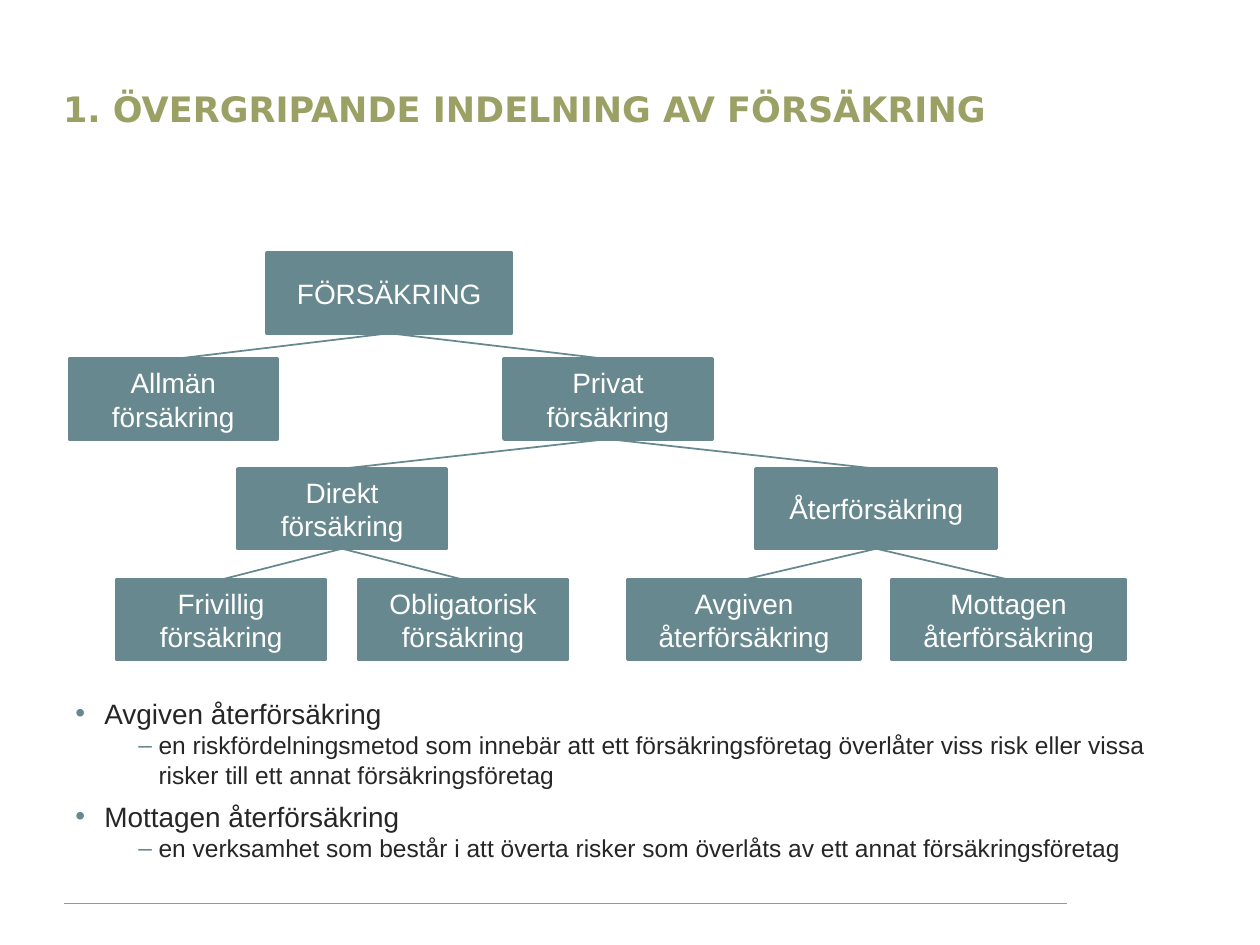
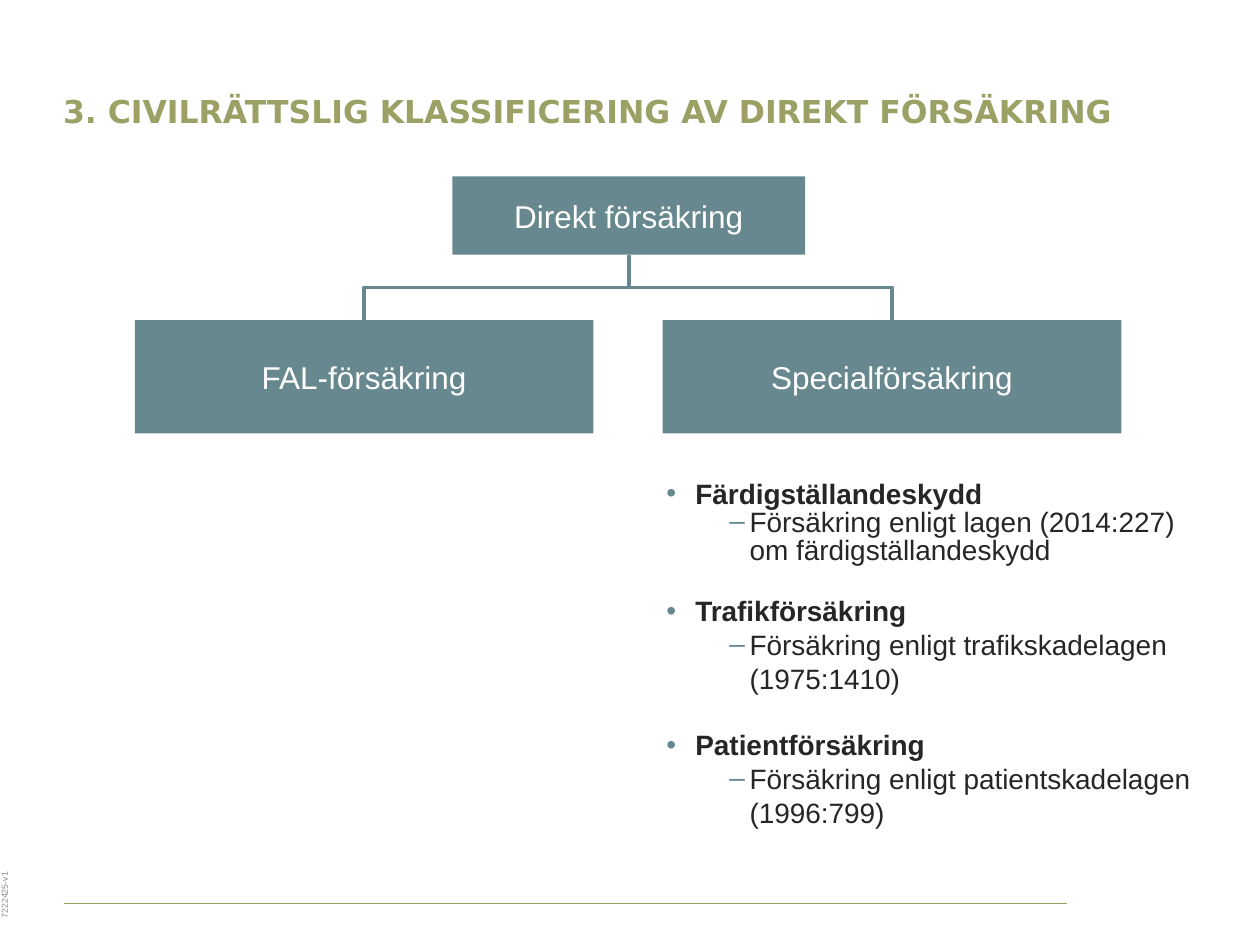
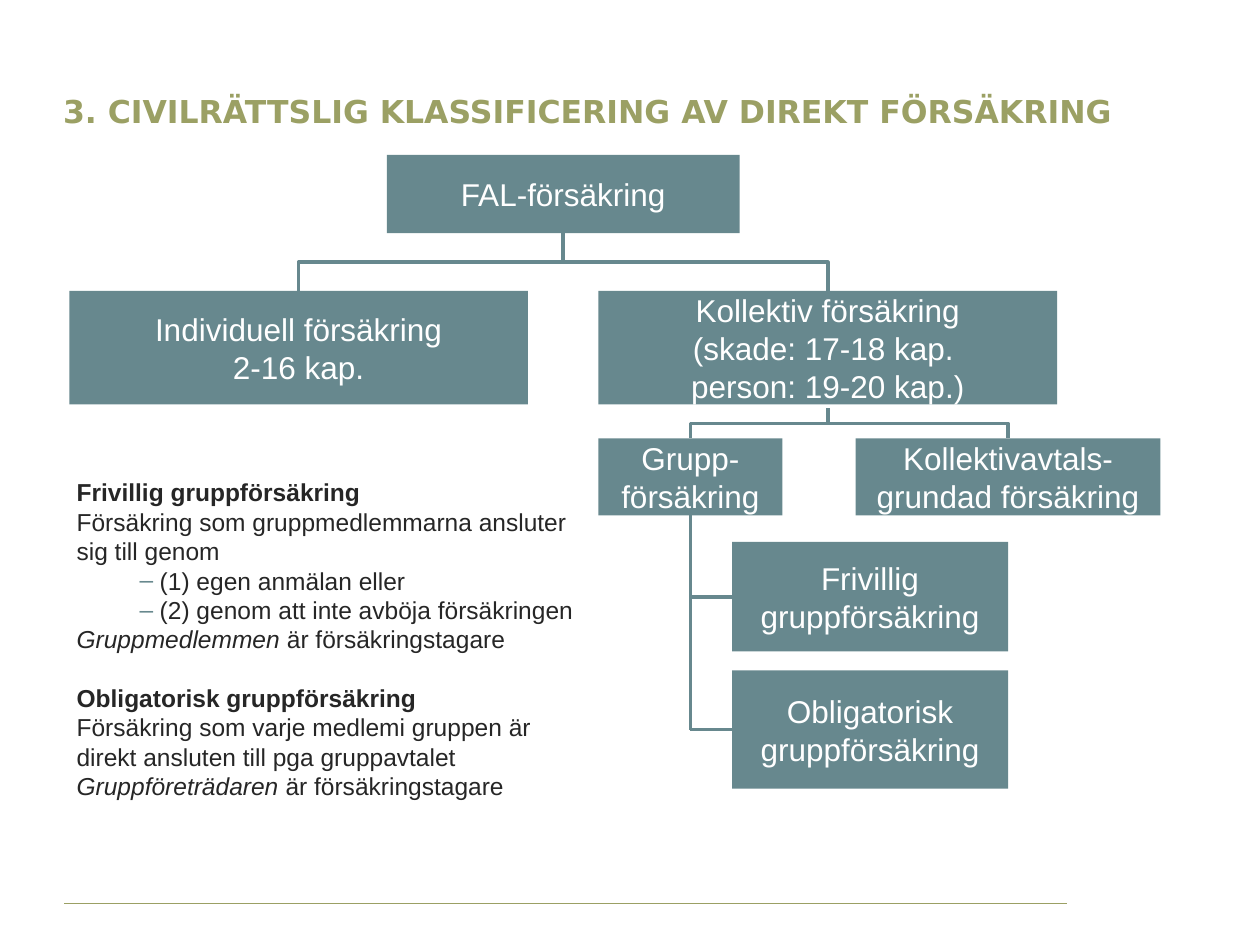
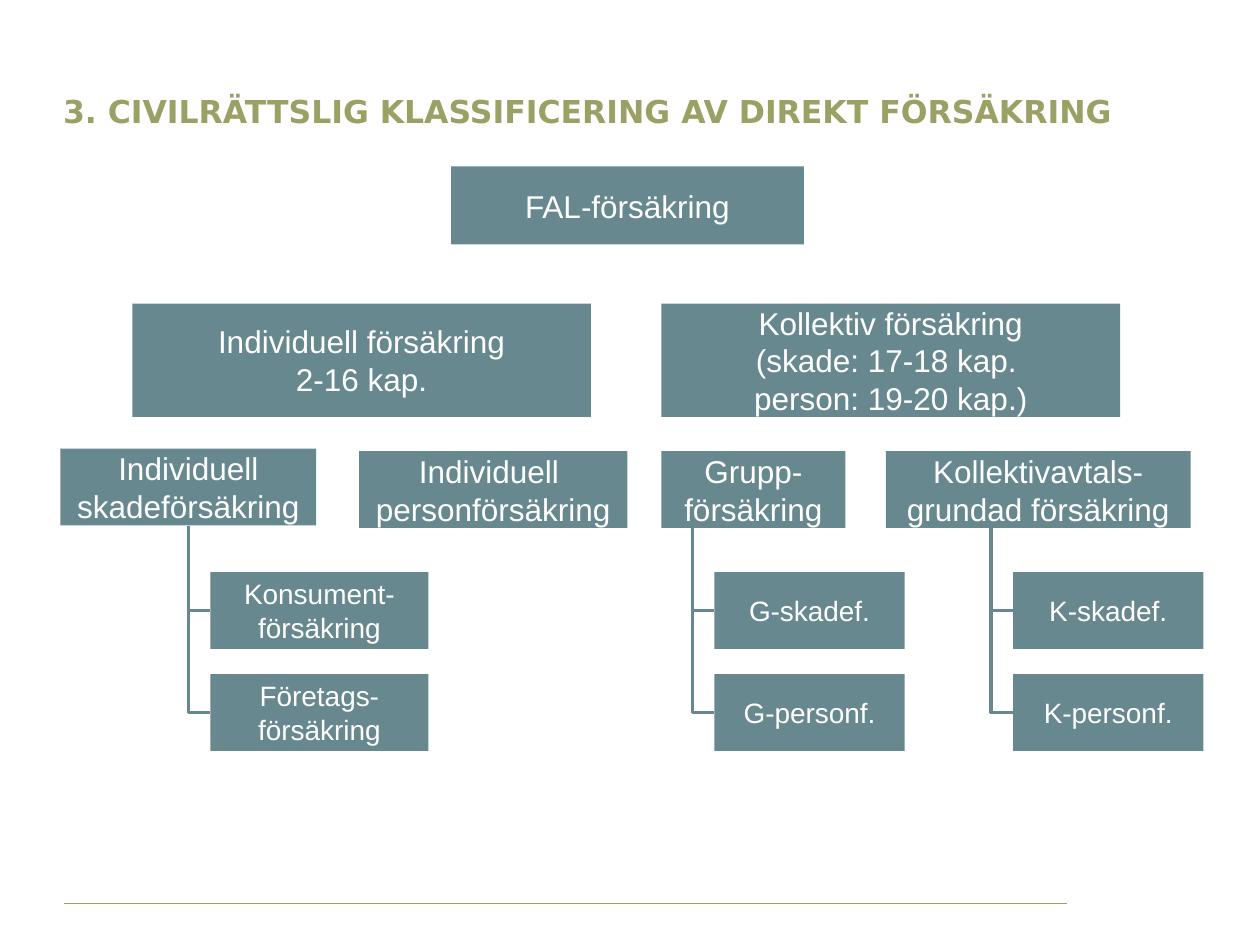
from lxml.etree import SubElement as Sub
from pptx import Presentation
from pptx.dml.color import RGBColor
from pptx.enum.shapes import MSO_CONNECTOR as Link, MSO_SHAPE as Form
from pptx.enum.text import MSO_ANCHOR as Anchor, MSO_AUTO_SIZE as Fit, PP_ALIGN as Align
from pptx.oxml.ns import qn
from pptx.util import Inches, Pt

TEAL = RGBColor(0x67, 0x88, 0x8E)
OLIVE = RGBColor(0x9B, 0xA0, 0x64)
INK = RGBColor(0x26, 0x26, 0x26)
GREY = RGBColor(0x89, 0x89, 0x89)
WHITE = RGBColor(0xFF, 0xFF, 0xFF)

WIDE, HIGH = Inches(10), Inches(7.5)
COLS, ROWS = 100, 75
CLASS = "3. CIVILRÄTTSLIG KLASSIFICERING AV DIREKT FÖRSÄKRING"
SOLO = "Individuell försäkring", "2-16 kap."
JOINT = "Kollektiv försäkring", "(skade: 17-18 kap. \nperson: 19-20 kap.)"
GROUP = "Grupp-försäkring"
PACT = "Kollektivavtals-grundad försäkring"
DOT = dict(mark="•", left=0.23, hang=0.23)
DASH = dict(mark="–", left=0.66, hang=0.16, level=1)


def col(n):
    return round(WIDE * n / COLS)


def row(n):
    return round(HIGH * n / ROWS)


def put(frame, text, size=16, color=INK, face="Arial", bold=False, align=None,
        mark=None, left=0, hang=0, level=0, before=None, pitch=None):
    para = frame.paragraphs[0]
    if para.runs:
        para = frame.add_paragraph()
    para.level = level
    if mark:
        props = para._p.get_or_add_pPr()
        props.set("marL", str(Inches(left)))
        props.set("indent", str(-Inches(hang)))
        tint = Sub(props, qn("a:buClr"))
        Sub(tint, qn("a:srgbClr")).set("val", str(TEAL))
        Sub(props, qn("a:buFont")).set("typeface", "Arial")
        Sub(props, qn("a:buChar")).set("char", mark)
    para.alignment = align
    para.space_before = before
    para.line_spacing = pitch
    for part, chunk in enumerate(text.split("*")):
        for n, line in enumerate(chunk.split("\n")):
            if n:
                para.add_line_break()
            if line:
                run = para.add_run()
                run.text = line
                font = run.font
                font.name, font.size, font.bold = face, Pt(size), bold
                font.italic = part % 2 == 1
                font.color.rgb = color


def mid(box):
    return box.left + box.width // 2


def foot(box):
    return box.top + box.height


class Deck:
    def __init__(self):
        self.file = Presentation()
        self.file.slide_width, self.file.slide_height = WIDE, HIGH
        self.page = None

    def start(self, title, size=18):
        self.page = self.file.slides.add_slide(self.file.slide_layouts[6])
        self.line(col(5.1), row(71.7), col(84.7), row(71.7), 0.75, OLIVE)
        frame = self.text(5, 3.7, 89.8, 7.1, inset=(0, 0.05, 0, 0.05))
        frame.vertical_anchor = Anchor.BOTTOM
        put(frame, title, size=size, color=OLIVE, face="DejaVu Sans", bold=True)

    def text(self, x, y, w, h, inset=(0.1, 0.05, 0.1, 0.05)):
        frame = self.page.shapes.add_textbox(col(x), row(y), col(w), row(h)).text_frame
        frame.word_wrap = True
        (frame.margin_left, frame.margin_top,
         frame.margin_right, frame.margin_bottom) = map(Inches, inset)
        return frame

    def box(self, x, y, w, h, *lines, size=18, form=Form.ROUNDED_RECTANGLE):
        box = self.page.shapes.add_shape(form, col(x), row(y), col(w), row(h))
        box.shadow.inherit = False
        box.fill.solid()
        box.fill.fore_color.rgb = TEAL
        if form == Form.RECTANGLE:
            box.line.color.rgb = TEAL
            box.line.width = Pt(2)
        else:
            box.adjustments[0] = 0
            box.line.fill.background()
        frame = box.text_frame
        frame.word_wrap = True
        frame.vertical_anchor = Anchor.MIDDLE
        for line in lines:
            put(frame, line, size=size, color=WHITE, align=Align.CENTER)
        return box

    def line(self, x, y, to_x, to_y, width=2, color=TEAL, kind=Link.STRAIGHT):
        line = self.page.shapes.add_connector(kind, x, y, to_x, to_y)
        line.line.color.rgb = color
        line.line.width = Pt(width)
        Sub(line._element.spPr, qn("a:effectLst"))
        return line

    def bend(self, x, y, to_x, to_y, kind="bentConnector3"):
        mid_x, mid_y = (x + to_x) // 2, (y + to_y) // 2
        half, side = (to_y - y) // 2, (to_x - x) // 2
        reach = half if side > 0 else -half
        line = self.line(mid_x + reach, mid_y - abs(side),
                         mid_x - reach, mid_y + abs(side), kind=Link.ELBOW)
        props = line._element.spPr
        props.find(qn("a:xfrm")).set("rot", str((270 if side > 0 else 90) * 60000))
        props.find(qn("a:prstGeom")).set("prst", kind)

    def fork(self, top, *kids, gap=0):
        for kid in kids:
            self.bend(mid(top), foot(top) + row(gap), mid(kid), kid.top)

    def rung(self, x, kid, width=2):
        y = kid.top + kid.height // 2
        self.line(x, y, kid.left, y, width)
        return y

    def pair(self, x, w, *names):
        kids = [self.box(x, 45.4 + 8.1 * n, w, 6.1, name, size=16)
                for n, name in enumerate(names)]
        stem = col(x - 1.75)
        last = kids[-1]
        self.bend(stem, row(41.75), last.left, last.top + last.height // 2,
                  "bentConnector2")
        self.rung(stem, kids[0])


def kinds(deck):
    deck.start("1. ÖVERGRIPANDE INDELNING AV FÖRSÄKRING", 20)
    tree = [
        ("FÖRSÄKRING", 21.2, 20.1, 19.4, None),
        ("Allmän försäkring", 5.5, 28.5, 16.5, 0),
        ("Privat försäkring", 40, 28.5, 16.5, 0),
        ("Direkt försäkring", 18.9, 37.2, 16.5, 2),
        ("Återförsäkring", 60, 37.2, 19.1, 2),
        ("Frivillig försäkring", 9.3, 46, 16.5, 3),
        ("Obligatorisk försäkring", 28.5, 46, 16.5, 3),
        ("Avgiven återförsäkring", 49.8, 46, 18.5, 4),
        ("Mottagen återförsäkring", 70.8, 46, 18.5, 4),
    ]
    boxes = [deck.box(x, y, w, 6.35, name, size=16, form=Form.RECTANGLE)
             for name, x, y, w, _ in tree]
    for kid, (*_, up) in zip(boxes, tree):
        if up is not None:
            top = boxes[up]
            deck.line(mid(top), foot(top), mid(kid), kid.top, 1)
    frame = deck.text(5, 54.8, 87.5, 15)
    put(frame, "Avgiven återförsäkring", **DOT)
    put(frame, "en riskfördelningsmetod som innebär att ett försäkringsföretag överlåter "
        "viss risk eller vissa risker till ett annat försäkringsföretag", size=14, **DASH)
    put(frame, "Mottagen återförsäkring", before=Pt(6), **DOT)
    put(frame, "en verksamhet som består i att överta risker som överlåts av ett annat "
        "försäkringsföretag", size=14, **DASH)


def direct(deck):
    deck.start(CLASS)
    top = deck.box(35.9, 14, 28, 6.2, "Direkt försäkring")
    fal = deck.box(10.7, 25.4, 36.4, 9, "FAL-försäkring")
    other = deck.box(52.6, 25.4, 36.4, 9, "Specialförsäkring")
    deck.fork(top, other, fal)
    frame = deck.text(51.9, 37.2, 43.8, 30.2)
    acts = [
        ("Färdigställandeskydd", "lagen (2014:227) om färdigställandeskydd",
         None, Pt(20), Pt(16)),
        ("Trafikförsäkring", "trafikskadelagen (1975:1410)", Pt(16), None, None),
        ("Patientförsäkring", "patientskadelagen (1996:799)", Pt(19), None, None),
    ]
    for name, act, before, head, body in acts:
        put(frame, name, bold=True, before=before, pitch=head, **DOT)
        put(frame, "Försäkring enligt " + act, pitch=body, **DASH)
    side = deck.text(0, 68.7, 1.8, 6.3, inset=(0, 0.05, 0.1, 0.21))
    side.word_wrap = False
    side.auto_size = Fit.SHAPE_TO_FIT_TEXT
    side._txBody.bodyPr.set("vert", "vert270")
    put(side, "7222425-v1", size=5, color=GREY, pitch=0.95)


def groups(deck):
    deck.start(CLASS)
    top = deck.box(30.7, 12.3, 28, 6.2, "FAL-försäkring")
    solo = deck.box(5.5, 23.1, 36.4, 9, *SOLO)
    joint = deck.box(47.5, 23.1, 36.4, 9, *JOINT)
    group = deck.box(47.5, 34.8, 14.6, 6.1, GROUP)
    pact = deck.box(67.9, 34.8, 24.2, 6.1, PACT)
    deck.fork(top, joint, solo)
    deck.fork(joint, pact, group, gap=0.3)
    free = deck.box(58.1, 43, 21.9, 8.7, "Frivillig gruppförsäkring")
    bound = deck.box(58.1, 53.2, 21.9, 9.4, "Obligatorisk gruppförsäkring")
    stem = mid(group)
    deck.rung(stem, free, 2.25)
    deck.line(stem, foot(group), stem, deck.rung(stem, bound, 2.25), 2.25)
    frame = deck.text(5.1, 37.4, 41.7, 30)
    put(frame, "Frivillig gruppförsäkring", size=14, bold=True)
    put(frame, "Försäkring som gruppmedlemmarna ansluter sig till genom", size=14)
    put(frame, "(1) egen anmälan eller", size=14, **DASH)
    put(frame, "(2) genom att inte avböja försäkringen", size=14, **DASH)
    put(frame, "*Gruppmedlemmen* är försäkringstagare", size=14)
    put(frame, "Obligatorisk gruppförsäkring", size=14, bold=True, before=Pt(16.5))
    put(frame, "Försäkring som varje medlemi gruppen är direkt ansluten till pga "
        "gruppavtalet", size=14)
    put(frame, "*Gruppföreträdaren* är försäkringstagare", size=14)


def whole(deck):
    deck.start(CLASS)
    deck.box(35.8, 13.2, 28, 6.2, "FAL-försäkring")
    deck.box(10.5, 24.1, 36.4, 9, *SOLO)
    deck.box(52.5, 24.1, 36.4, 9, *JOINT)
    deck.box(4.8, 35.6, 20.3, 6.1, "Individuell skadeförsäkring")
    deck.box(28.5, 35.8, 21.3, 6.1, "Individuell \npersonförsäkring")
    deck.box(52.5, 35.8, 14.6, 6.1, GROUP)
    deck.box(70.3, 35.8, 24.2, 6.1, PACT)
    deck.pair(16.7, 17.3, "Konsument-försäkring", "Företags-försäkring")
    deck.pair(56.7, 15.1, "G-skadef.", "G-personf.")
    deck.pair(80.4, 15.1, "K-skadef.", "K-personf.")


def main():
    deck = Deck()
    for draw in (kinds, direct, groups, whole):
        draw(deck)
    deck.file.save("out.pptx")


if __name__ == "__main__":
    main()
